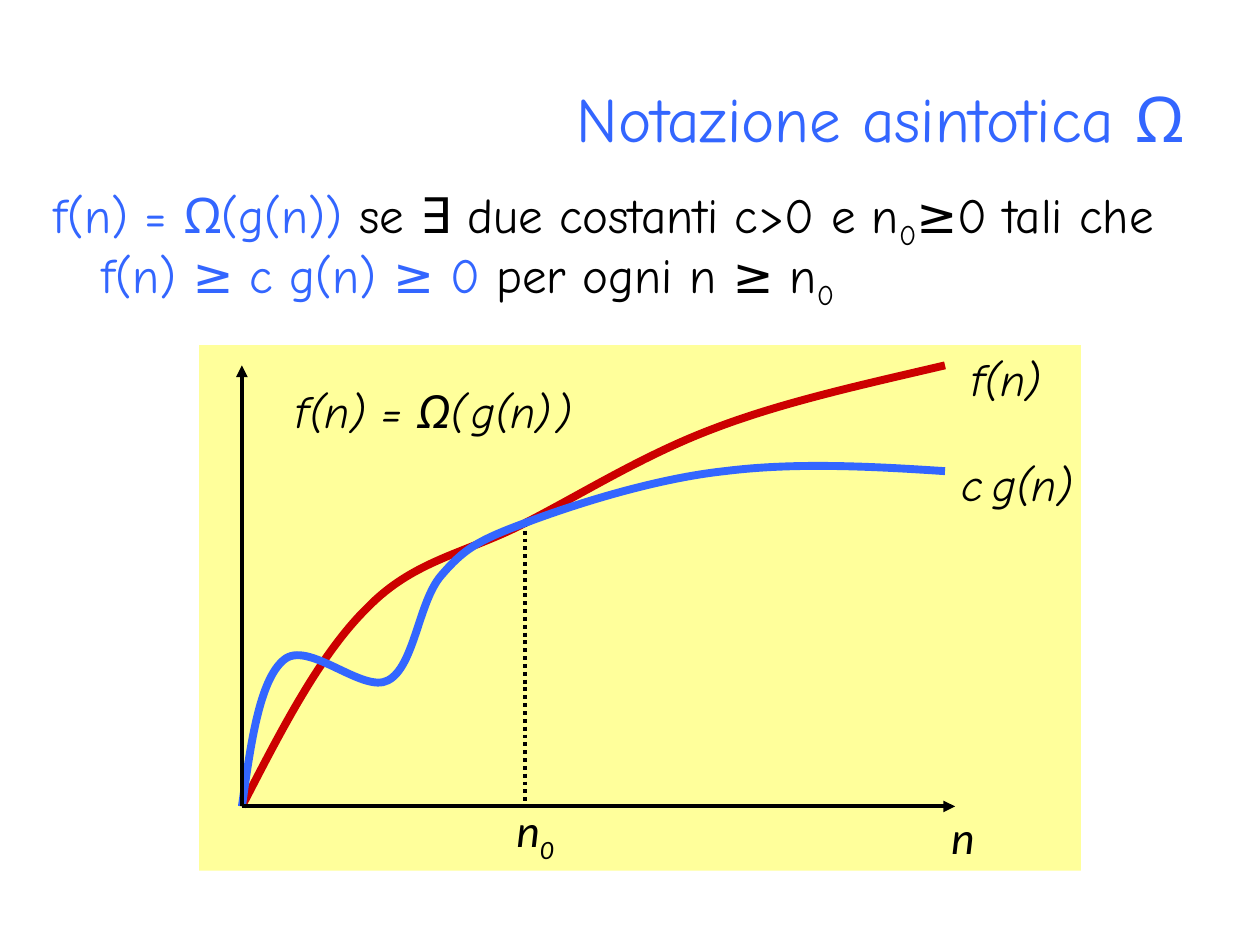
import dataclasses

import pptx
import pptx.dml.color
import pptx.enum.dml
import pptx.enum.shapes
import pptx.enum.text
import pptx.oxml
import pptx.oxml.ns
import pptx.util

Inches = pptx.util.Inches
Pt = pptx.util.Pt
Point = tuple[float, float]

BLACK, BLUE, RED, YELLOW = "000000", "3366FF", "CC0000", "FFFF9B"
COMIC, CALIBRI = "Comic Neue", "Calibri"
ORIGIN: Point = (1.92, 6.4)
CROSSING: Point = (4.17, 4.15)
AXIS_TOP, AXIS_RIGHT, CURVE_END = 2.9, 7.58, 7.5
LABEL_SIZE = 26


@dataclasses.dataclass(frozen=True)
class Piece:
    text: str
    size: float = LABEL_SIZE
    color: str = BLACK
    subscript: bool = False


@dataclasses.dataclass(frozen=True)
class Label:
    left: float
    top: float
    width: float
    height: float
    pieces: tuple[Piece, ...]
    font: str = COMIC


@dataclasses.dataclass(frozen=True)
class Curve:
    """Bezier points after the origin: two controls and an end per arc."""
    color: str
    points: tuple[Point, ...]


HEADING = Label(0.5, 0.58, 9, 1, (Piece("Notazione asintotica Ω", 36, BLUE),))
DEFINITION = Label(0.33, 1.42, 9.5, 2.67, (
    Piece("f(n) = Ω(g(n))", 28, BLUE),
    Piece(" se ∃ due costanti c>0 e n", 28),
    Piece("0", 28, subscript=True),
    Piece("≥0 tali che ", 28),
    Piece("f(n) ≥ c g(n) ≥ 0 ", 28, BLUE),
    Piece("per ogni n ≥ n", 28),
    Piece("0", 28, subscript=True),
))
CHART_LABELS = (
    Label(4, 6.32, 0.5, 0.53, (Piece("n"), Piece("0", subscript=True)), CALIBRI),
    Label(7.45, 6.37, 0.38, 0.53, (Piece("n"),), CALIBRI),
    Label(2.25, 2.99, 2.51, 0.54, (
        Piece("f(n) = Ω("), Piece(" ", 8), Piece("g(n)"), Piece(" ", 8), Piece(")"))),
    Label(7.61, 2.74, 0.85, 0.54, (Piece("f(n)"),)),
    Label(7.53, 3.57, 1.11, 0.54, (Piece("c"), Piece(" ", 16), Piece("g(n)"))),
)
F_CURVE = Curve(RED, (
    (2.23, 5.8), (2.54, 5.19), (2.92, 4.82),
    (3.29, 4.44), (3.71, 4.39), CROSSING,
    (4.62, 3.92), (5.11, 3.61), (5.67, 3.4),
    (6.22, 3.19), (6.86, 3.05), (CURVE_END, AXIS_TOP),
))
G_CURVE = Curve(BLUE, (
    (1.99, 5.9), (2.06, 5.4), (2.25, 5.24),
    (2.44, 5.07), (2.88, 5.51), (3.08, 5.4),
    (3.29, 5.29), (3.32, 4.78), (3.5, 4.57),
    (3.68, 4.36), (3.79, 4.29), CROSSING,
    (4.54, 4.01), (5.19, 3.8), (5.75, 3.74),
    (6.3, 3.67), (6.9, 3.7), (CURVE_END, 3.74),
))


def rgb(color: str) -> pptx.dml.color.RGBColor:
    return pptx.dml.color.RGBColor.from_string(color)


def add_text(slide, label: Label, italic: bool = False, wrap: bool = False):
    """Add a one-paragraph text box and return its paragraph."""
    box = slide.shapes.add_textbox(
        *map(Inches, (label.left, label.top, label.width, label.height)))
    frame = box.text_frame
    frame.word_wrap = wrap
    if not wrap:
        frame.auto_size = pptx.enum.text.MSO_AUTO_SIZE.SHAPE_TO_FIT_TEXT
    para = frame.paragraphs[0]
    for piece in label.pieces:
        span = para.add_run()
        span.text = piece.text
        span.font.name = label.font
        span.font.size = Pt(piece.size)
        span.font.italic = italic
        span.font.color.rgb = rgb(piece.color)
        if piece.subscript:
            span.font._element.set("baseline", "-25000")
    return para


def add_hanging_text(slide, label: Label):
    para = add_text(slide, label, wrap=True)
    properties = para._p.get_or_add_pPr()
    properties.set("marL", str(Inches(0.38)))
    properties.set("indent", str(Inches(-0.38)))
    para.space_before = Pt(0.2 * label.pieces[0].size)
    return para


def add_panel(slide) -> None:
    panel = slide.shapes.add_shape(
        pptx.enum.shapes.MSO_SHAPE.RECTANGLE, *map(Inches, (1.58, 2.74, 7, 4.17)))
    panel.shadow.inherit = False
    panel.fill.solid()
    panel.fill.fore_color.rgb = rgb(YELLOW)
    panel.line.fill.background()


def add_curve(slide, curve: Curve) -> None:
    """Outline the control points, then turn each three segments into one arc."""
    builder = slide.shapes.build_freeform(*map(Inches, ORIGIN))
    builder.add_line_segments(
        [(Inches(x), Inches(y)) for x, y in curve.points], close=False)
    shape = builder.convert_to_shape()
    shape.shadow.inherit = False
    shape.fill.background()
    shape.line.color.rgb = rgb(curve.color)
    shape.line.width = Pt(4.5)
    qn = pptx.oxml.ns.qn
    outline = next(shape._element.iter(qn("a:path")))
    segments = outline.findall(qn("a:lnTo"))
    for start in range(0, len(segments), 3):
        arc = outline.makeelement(qn("a:cubicBezTo"), {})
        outline.append(arc)
        for segment in segments[start:start + 3]:
            arc.append(segment[0])
            outline.remove(segment)


def add_line(slide, start: Point, end: Point, arrow: bool = False) -> None:
    """Add an arrow, or a dotted line when there is no arrowhead."""
    line = slide.shapes.add_connector(
        pptx.enum.shapes.MSO_CONNECTOR.STRAIGHT, *map(Inches, start + end))
    line.line.color.rgb = rgb(BLACK)
    line.line.width = Pt(2.25)
    if arrow:
        stroke = line.line._get_or_add_ln()
        stroke.append(stroke.makeelement(
            pptx.oxml.ns.qn("a:tailEnd"), {"type": "triangle"}))
    else:
        line.line.dash_style = pptx.enum.dml.MSO_LINE.ROUND_DOT
    properties = line._element.spPr
    properties.append(properties.makeelement(pptx.oxml.ns.qn("a:effectLst"), {}))


def main() -> None:
    deck = pptx.Presentation()
    deck.slide_width, deck.slide_height = Inches(10), Inches(7.5)
    slide = deck.slides.add_slide(deck.slide_layouts[6])

    add_hanging_text(slide, DEFINITION).line_spacing = 0.9
    add_hanging_text(slide, HEADING).alignment = pptx.enum.text.PP_ALIGN.RIGHT

    add_panel(slide)
    add_curve(slide, F_CURVE)
    add_line(slide, CROSSING, (CROSSING[0], ORIGIN[1]))
    add_curve(slide, G_CURVE)
    for label in CHART_LABELS:
        add_text(slide, label, italic=True)
    add_line(slide, ORIGIN, (ORIGIN[0], AXIS_TOP), arrow=True)
    add_line(slide, ORIGIN, (AXIS_RIGHT, ORIGIN[1]), arrow=True)

    deck.save("out.pptx")


if __name__ == "__main__":
    main()
